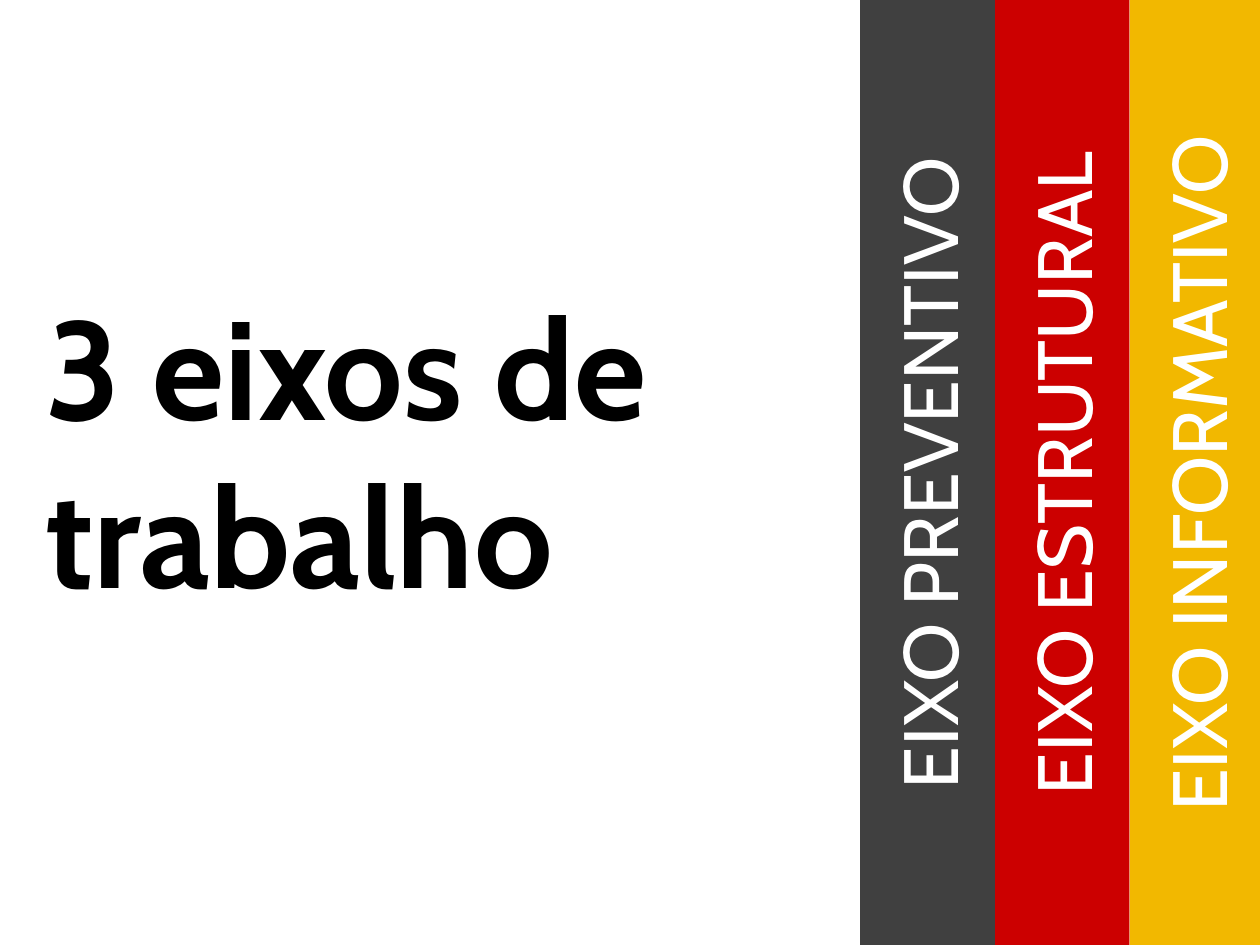
from dataclasses import dataclass

from pptx import Presentation
from pptx.dml.color import RGBColor
from pptx.enum.shapes import MSO_SHAPE as Preset
from pptx.enum.text import MSO_ANCHOR as Anchor, MSO_AUTO_SIZE as AutoSize, PP_ALIGN as Align
from pptx.util import Pt


@dataclass(frozen=True)
class Theme:
    font: str = "Cabin"
    title_size: int = 80
    band_size: int = 44
    ink: str = "000000"
    light: str = "FFFFFF"
    gray: str = "404040"
    red: str = "CC0000"
    yellow: str = "F2B800"


THEME = Theme()
BANDS = [
    ("EIXO PREVENTIVO", THEME.gray),
    ("EIXO ESTRUTURAL", THEME.red),
    ("EIXO INFORMATIVO", THEME.yellow),
]


def add_span(para, text, size, color, bold=False):
    span = para.add_run()
    span.text = text
    span.font.name = THEME.font
    span.font.size = Pt(size)
    span.font.bold = bold
    span.font.color.rgb = RGBColor.from_string(color)


def add_title(page, left, top, width, height):
    box = page.shapes.add_textbox(Pt(left), Pt(top), Pt(width), Pt(height))
    frame = box.text_frame
    frame.word_wrap = True
    frame.auto_size = AutoSize.SHAPE_TO_FIT_TEXT
    add_span(frame.paragraphs[0], "3 eixos de trabalho",
             THEME.title_size, THEME.ink, bold=True)


def add_band(page, left, top, width, height, text, color):
    """Fill the upright box given with a bar turned to read from bottom to top."""
    shift = (height - width) / 2
    bar = page.shapes.add_shape(Preset.RECTANGLE, Pt(left - shift), Pt(top + shift),
                                Pt(height), Pt(width))
    bar.rotation = 270
    bar.shadow.inherit = False
    bar.fill.solid()
    bar.fill.fore_color.rgb = RGBColor.from_string(color)
    bar.line.fill.background()
    frame = bar.text_frame
    frame.word_wrap = True
    frame.vertical_anchor = Anchor.MIDDLE
    para = frame.paragraphs[0]
    para.alignment = Align.CENTER
    add_span(para, text, THEME.band_size, THEME.light)


def add_bands(page, left, top, width, height):
    """Split the box into equal bands, the rightmost one at the back."""
    band_width = width / len(BANDS)
    for index, (text, color) in reversed(list(enumerate(BANDS))):
        add_band(page, left + index * band_width, top, band_width, height, text, color)


def main():
    deck = Presentation()
    deck.slide_width, deck.slide_height = Pt(720), Pt(540)
    page = deck.slides.add_slide(deck.slide_layouts[6])
    add_bands(page, left=491.5, top=-2, width=231, height=545)
    add_title(page, left=19, top=157, width=477, height=201)
    deck.save("out.pptx")


if __name__ == "__main__":
    main()
